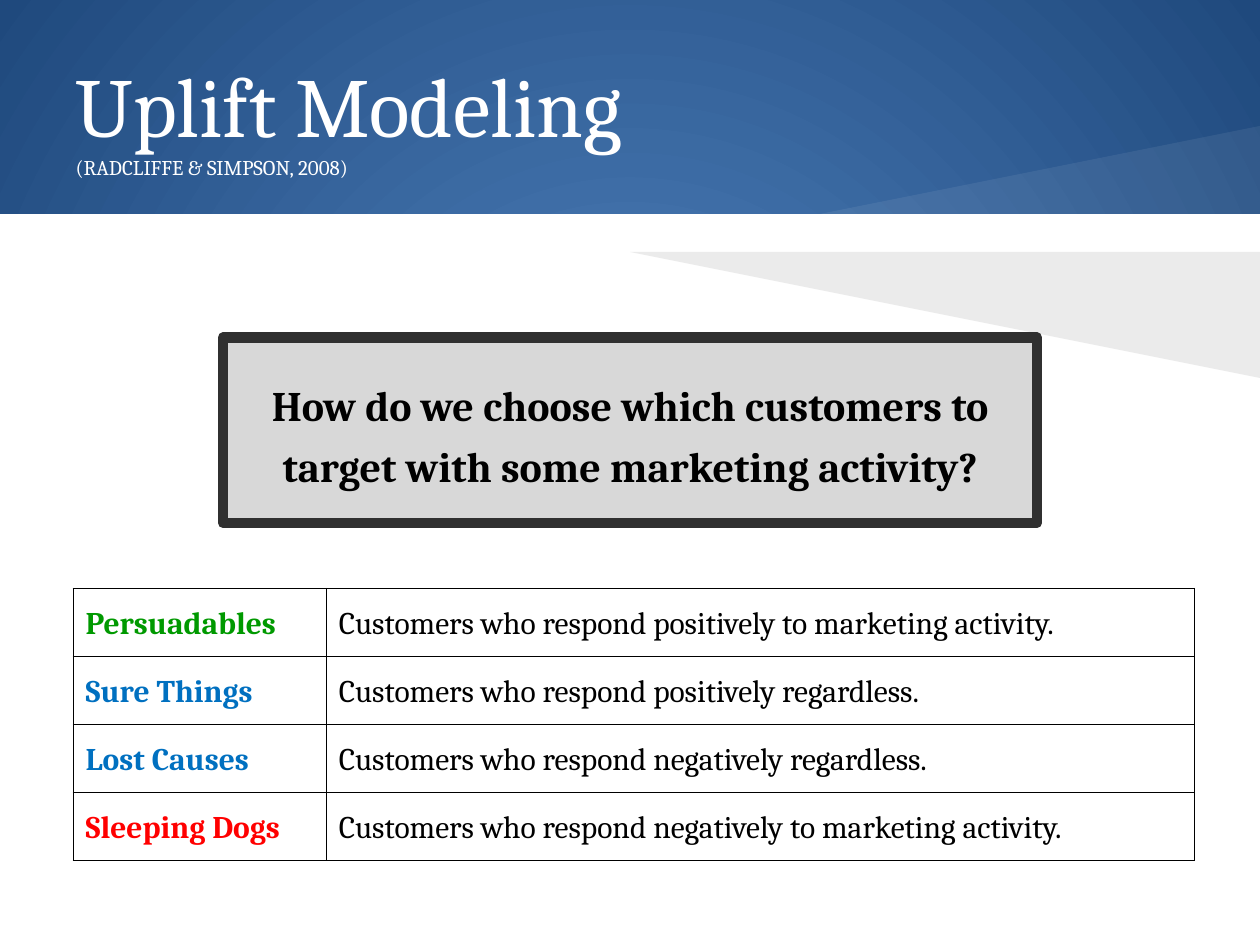
from dataclasses import dataclass

from lxml.etree import SubElement
from pptx import Presentation
from pptx.dml.color import RGBColor as RGB
from pptx.enum.shapes import MSO_SHAPE as Shape
from pptx.enum.text import MSO_ANCHOR as Anchor, MSO_AUTO_SIZE as AutoSize, PP_ALIGN as Align
from pptx.oxml.ns import qn
from pptx.util import Inches, Pt

WIDTH, HEIGHT = 10, 7.5
HORIZON = 1.7
INSET = 0.1


@dataclass(frozen=True)
class Theme:
    font: str = "Cambria"
    sky_light: str = "4F81BD"
    sky_dark: str = "1F497D"
    white: str = "FFFFFF"
    black: str = "000000"
    box_fill: str = "D8D8D8"
    box_line: str = "303030"
    good: str = "009900"
    neutral: str = "0070C0"
    bad: str = "FF0000"
    title_pt: int = 48
    cite_pt: int = 12
    question_pt: int = 24
    table_pt: int = 18
    box_line_pt: int = 6
    border_pt: float = 0.75


@dataclass(frozen=True)
class Segment:
    name: str
    color: str
    meaning: str


T = Theme()
SEGMENTS = [
    Segment("Persuadables", T.good, "Customers who respond positively to marketing activity."),
    Segment("Sure Things", T.neutral, "Customers who respond positively regardless."),
    Segment("Lost Causes", T.neutral, "Customers who respond negatively regardless."),
    Segment("Sleeping Dogs", T.bad, "Customers who respond negatively to marketing activity."),
]


def add_run(p, text: str, size: float, color: str, bold: bool = False) -> None:
    r = p.add_run()
    r.text = text
    r.font.name, r.font.size, r.font.bold = T.font, Pt(size), bold
    r.font.color.rgb = RGB.from_string(color)


def set_insets(frame) -> None:
    """Works for text frames and table cells alike."""
    frame.margin_left = frame.margin_right = Inches(INSET)
    frame.margin_top = frame.margin_bottom = Inches(INSET)


def paint(sp, color: str) -> None:
    sp.shadow.inherit = False
    sp.fill.solid()
    sp.fill.fore_color.rgb = RGB.from_string(color)
    sp.line.fill.background()


def paint_background(slide) -> None:
    fill = slide.background.fill
    fill.gradient()
    for stop, color, position in zip(fill.gradient_stops, (T.sky_light, T.sky_dark), (0, 1)):
        stop.color.rgb = RGB.from_string(color)
        stop.position = position
    grad = next(slide.element.iter(qn("a:gradFill")))
    grad.remove(grad.find(qn("a:lin")))
    circle = SubElement(grad, qn("a:path"), path="circle")
    SubElement(circle, qn("a:fillToRect"), l="50000", t="50000", r="50000", b="50000")


def add_ray(slide, edge_y: float, color: str, opacity: int) -> None:
    """Triangle from the middle of the horizon to the right edge."""
    builder = slide.shapes.build_freeform(WIDTH, HORIZON, scale=Inches(1))
    builder.add_line_segments([(4.95, HORIZON), (WIDTH, edge_y)], close=True)
    sp = builder.convert_to_shape()
    paint(sp, color)
    clr = next(sp.element.spPr.iter(qn("a:srgbClr")))
    SubElement(clr, qn("a:alpha"), val=str(opacity * 1000))


def place_title(slide) -> None:
    title = slide.shapes.title
    slide.shapes.element.append(title.element)  # bring in front of the panels
    title.left, title.top = Inches(0.5), Inches(0.3)
    title.width, title.height = Inches(9), Inches(1.25)
    tf = title.text_frame
    tf.auto_size, tf.word_wrap, tf.vertical_anchor = AutoSize.NONE, True, Anchor.MIDDLE
    set_insets(tf)
    p = tf.paragraphs[0]
    p.alignment = Align.LEFT
    add_run(p, "Uplift Modeling", T.title_pt, T.white)
    p.add_line_break()
    add_run(p, "(RADCLIFFE & SIMPSON, 2008)", T.cite_pt, T.white)


def add_question(slide, text: str) -> None:
    width = 6.46
    sp = slide.shapes.add_shape(Shape.RECTANGLE, Inches((WIDTH - width) / 2), Inches(2.68),
                                Inches(width), Inches(1.47))
    paint(sp, T.box_fill)
    sp.line.color.rgb = RGB.from_string(T.box_line)
    sp.line.width = Pt(T.box_line_pt)
    SubElement(sp.element.spPr.find(qn("a:ln")), qn("a:round"))
    tf = sp.text_frame
    tf.word_wrap, tf.vertical_anchor = True, Anchor.MIDDLE
    set_insets(tf)
    p = tf.paragraphs[0]
    p.alignment, p.line_spacing = Align.CENTER, 1.2
    add_run(p, text, T.question_pt, T.black, bold=True)


def fill_cell(cell, text: str, color: str, bold: bool) -> None:
    tc_pr = cell._tc.get_or_add_tcPr()
    for side in ("lnL", "lnR", "lnT", "lnB"):
        ln = SubElement(tc_pr, qn(f"a:{side}"), w=str(Pt(T.border_pt)))
        SubElement(SubElement(ln, qn("a:solidFill")), qn("a:srgbClr"), val=T.black)
    cell.fill.background()
    set_insets(cell)
    p = cell.text_frame.paragraphs[0]
    p.line_spacing = 1.15
    add_run(p, text, T.table_pt, color, bold)


def add_segments(slide, segments: list[Segment]) -> None:
    columns, row_height = (2.01, 6.89), 0.54
    table = slide.shapes.add_table(len(segments), len(columns), Inches(0.58), Inches(4.67),
                                   Inches(sum(columns)),
                                   Inches(row_height * len(segments))).table
    table.first_row = table.horz_banding = False
    for column, width in zip(table.columns, columns):
        column.width = Inches(width)
    for row, segment in zip(table.rows, segments):
        row.height = Inches(row_height)
        fill_cell(row.cells[0], segment.name, segment.color, bold=True)
        fill_cell(row.cells[1], segment.meaning, T.black, bold=False)


def main() -> None:
    prs = Presentation()
    prs.slide_width, prs.slide_height = Inches(WIDTH), Inches(HEIGHT)
    slide = prs.slides.add_slide(prs.slide_layouts[5])

    # Backdrop: gradient band, white page, two rays mirrored at the horizon
    paint_background(slide)
    page = slide.shapes.add_shape(Shape.RECTANGLE, 0, Inches(HORIZON),
                                  Inches(WIDTH), Inches(HEIGHT - HORIZON))
    paint(page, T.white)
    ray_height = 0.85
    add_ray(slide, HORIZON - ray_height, T.white, 7)
    add_ray(slide, HORIZON + ray_height, T.black, 8)

    # Content
    place_title(slide)
    add_question(slide, "How do we choose which customers to target with some marketing activity?")
    add_segments(slide, SEGMENTS)
    prs.save("out.pptx")


if __name__ == "__main__":
    main()
